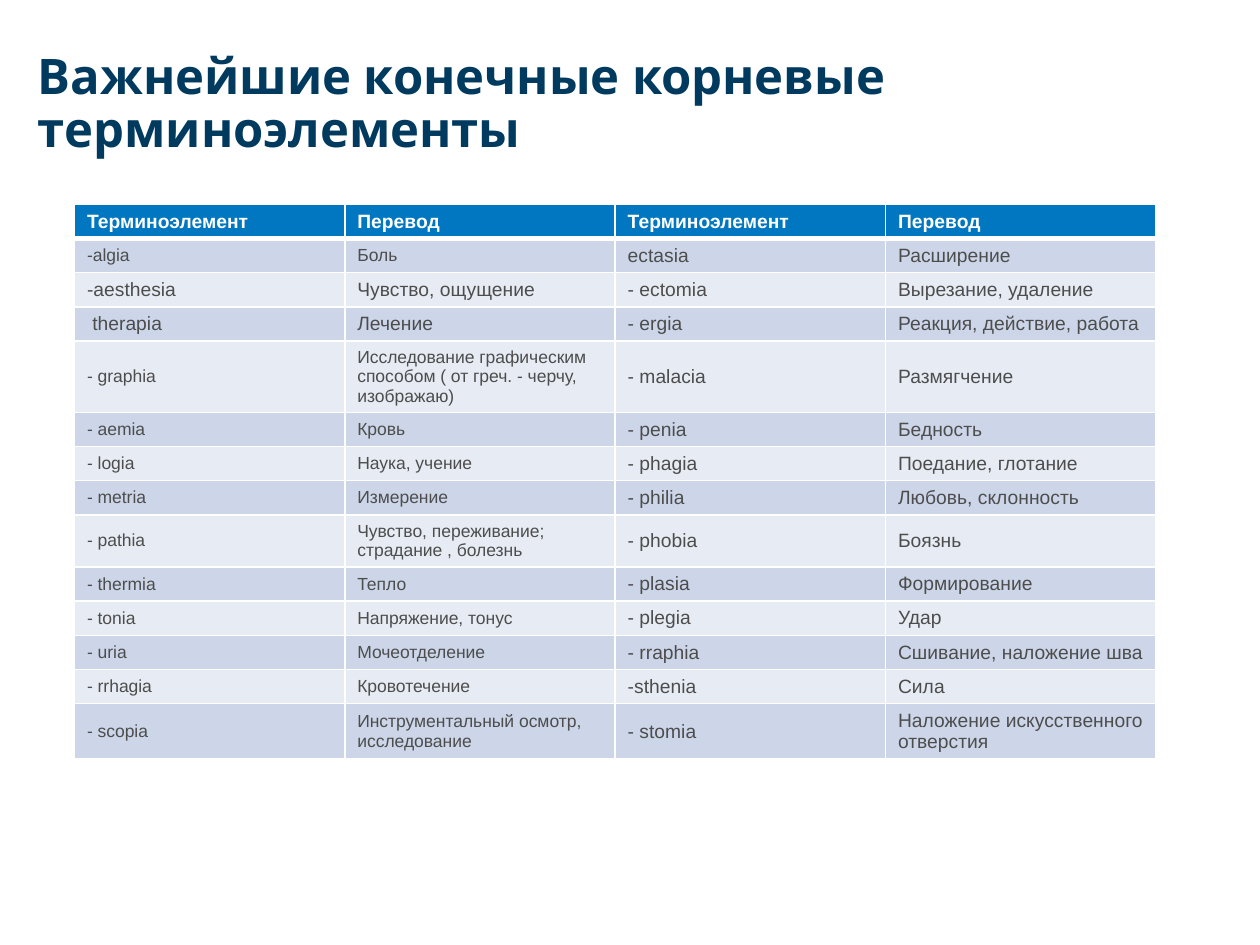
from lxml.etree import SubElement
from pptx import Presentation
from pptx.dml.color import RGBColor
from pptx.enum.text import MSO_ANCHOR, MSO_AUTO_SIZE, PP_ALIGN
from pptx.oxml.ns import qn
from pptx.util import Cm, Pt

NAVY = RGBColor(0x00, 0x3A, 0x5F)
BLUE = RGBColor(0x00, 0x77, 0xC0)
DARK_BAND = RGBColor(0xCC, 0xD6, 0xE8)
LIGHT_BAND = RGBColor(0xE7, 0xEC, 0xF4)
GREY = RGBColor(0x4D, 0x4D, 0x4D)
WHITE = RGBColor(0xFF, 0xFF, 0xFF)

TITLE = "Важнейшие конечные корневые терминоэлементы"
TERMS = [
    ("Терминоэлемент", "Перевод", "Терминоэлемент", "Перевод"),
    ("-algia", "Боль", "ectasia", "Расширение"),
    ("-aesthesia", "Чувство, ощущение", "- ectomia", "Вырезание, удаление"),
    (" therapia", "Лечение", "- ergia", "Реакция, действие, работа"),
    ("- graphia", "Исследование графическим способом ( от греч. - черчу, изображаю)",
     "- malacia", "Размягчение"),
    ("- aemia", "Кровь", "- penia", "Бедность"),
    ("- logia", "Наука, учение", "- phagia", "Поедание, глотание"),
    ("- metria", "Измерение", "- philia", "Любовь, склонность"),
    ("- pathia", "Чувство, переживание; страдание , болезнь", "- phobia", "Боязнь"),
    ("- thermia", "Тепло", "- plasia", "Формирование"),
    ("- tonia", "Напряжение, тонус", "- plegia", "Удар"),
    ("- uria", "Мочеотделение", "- rraphia", "Сшивание, наложение шва"),
    ("- rrhagia", "Кровотечение", "-sthenia", "Сила"),
    ("- scopia", "Инструментальный осмотр, исследование",
     "- stomia", "Наложение искусственного отверстия"),
]
ROW_HEIGHT = 0.69
TALL_ROWS = {4: 1.43, 8: 1.05, 13: 1.11}
LARGE_ROWS = (0, 2, 3)  # rows set in 11 pt across all columns


def format_run(run, name, size, color, bold):
    run.font.name = name
    run.font.size = Pt(size)
    run.font.color.rgb = color
    run.font.bold = bold


def add_title(slide, left, top, width, height):
    title = slide.shapes.title
    title.left, title.top = Cm(left), Cm(top)
    title.width, title.height = Cm(width), Cm(height)
    frame = title.text_frame
    frame.text = TITLE
    frame.word_wrap = True
    frame.auto_size = MSO_AUTO_SIZE.NONE
    frame.vertical_anchor = MSO_ANCHOR.MIDDLE
    paragraph = frame.paragraphs[0]
    paragraph.alignment = PP_ALIGN.LEFT
    paragraph.line_spacing = 0.9
    format_run(paragraph.runs[0], "Karla", 28, NAVY, True)


def set_borders(cell, top, bottom):
    """Draw white cell borders; must run before the fill is set."""
    properties = cell._tc.get_or_add_tcPr()
    for tag, width in (("lnL", 1), ("lnR", 1), ("lnT", top), ("lnB", bottom)):
        line = SubElement(properties, qn(f"a:{tag}"), w=str(Pt(width)))
        fill = SubElement(line, qn("a:solidFill"))
        SubElement(fill, qn("a:srgbClr"), val=str(WHITE))


def add_terms_table(slide, left, top, width):
    heights = [TALL_ROWS.get(row, ROW_HEIGHT) for row in range(len(TERMS))]
    column_count = len(TERMS[0])
    table = slide.shapes.add_table(len(TERMS), column_count, Cm(left), Cm(top),
                                   Cm(width), Cm(sum(heights))).table
    for column in table.columns:
        column.width = Cm(width / column_count)

    for row, texts in enumerate(TERMS):
        table.rows[row].height = Cm(heights[row])
        header = row == 0
        band = BLUE if header else DARK_BAND if row % 2 else LIGHT_BAND
        for column, text in enumerate(texts):
            cell = table.cell(row, column)
            set_borders(cell, top=3 if row == 1 else 1, bottom=3 if header else 1)
            cell.fill.solid()
            cell.fill.fore_color.rgb = band
            cell.vertical_anchor = MSO_ANCHOR.MIDDLE
            cell.text = text
            size = 11 if column >= 2 or row in LARGE_ROWS else 10
            format_run(cell.text_frame.paragraphs[0].runs[0], "Arial", size,
                       WHITE if header else GREY, header)


def main():
    presentation = Presentation()
    presentation.slide_width, presentation.slide_height = Cm(25.4), Cm(19.05)
    slide = presentation.slides.add_slide(presentation.slide_layouts[5])
    add_title(slide, 0.51, 1.12, 20.32, 1.98)
    add_terms_table(slide, 1.5, 4.12, 21.8)
    presentation.save("out.pptx")


if __name__ == "__main__":
    main()
